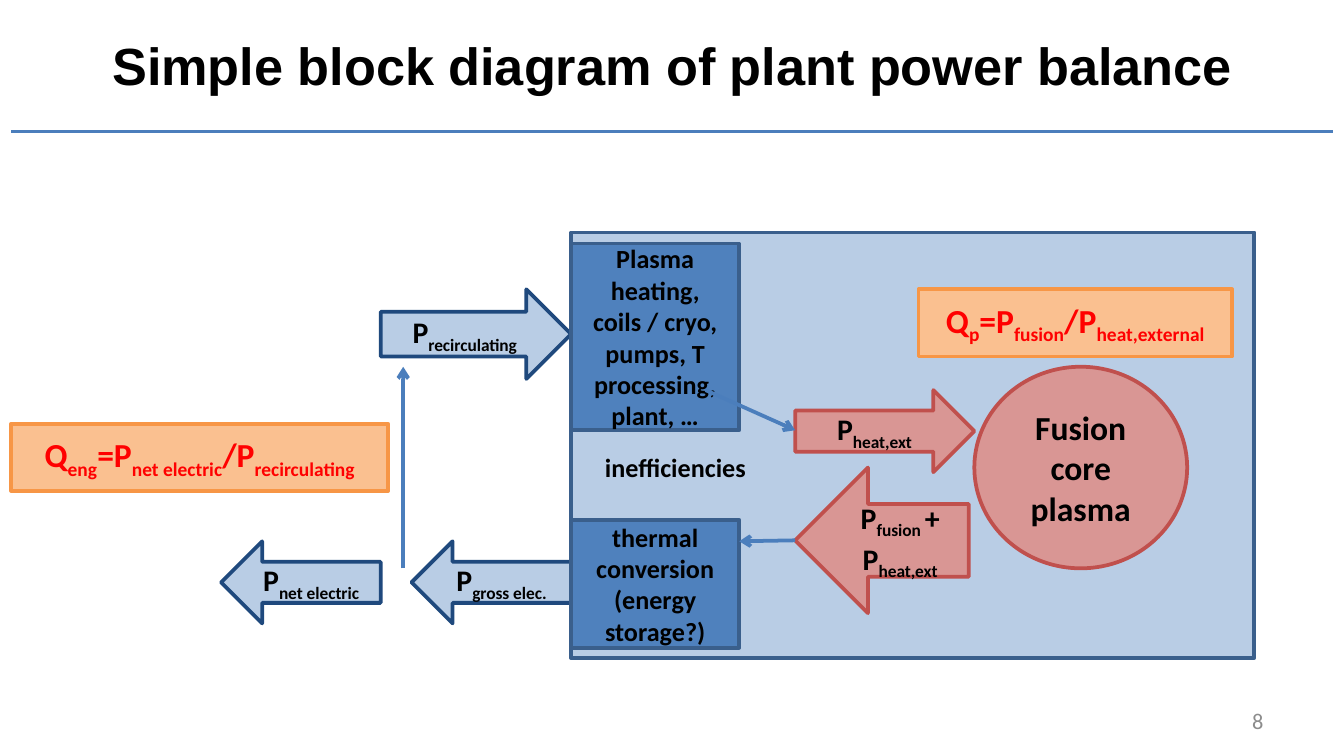
"""Build the slide with the plant power balance block diagram."""
from lxml import etree
from pptx import Presentation
from pptx.dml.color import RGBColor
from pptx.enum.shapes import MSO_CONNECTOR, MSO_SHAPE
from pptx.enum.text import MSO_ANCHOR, MSO_AUTO_SIZE, PP_ALIGN
from pptx.oxml.ns import qn
from pptx.util import Pt

RECT, OVAL, ARROW = MSO_SHAPE.RECTANGLE, MSO_SHAPE.OVAL, MSO_SHAPE.RIGHT_ARROW
LEFT, MID, RIGHT = PP_ALIGN.LEFT, PP_ALIGN.CENTER, PP_ALIGN.RIGHT
TOP, CENTER = MSO_ANCHOR.TOP, MSO_ANCHOR.MIDDLE

SIZE = 720, 405
LINK = "4B7EBC"
LOOKS = {
    "plant": ("B9CDE5", "3A5F8C"),
    "unit": ("4F81BD", "3A5F8C"),
    "core": ("D99694", "C0504D"),
    "power": ("B9CDE5", "1F497D"),
    "gain": ("FAC090", "F79646"),
}
# Text between bars is subscript: "P|heat,ext" sets "heat,ext" below the line.
BLOCKS = [
    (RECT, "plant", (306, 124.5, 366, 228), "", {}),
    (OVAL, "core", (522, 196.5, 114, 108), "Fusion core plasma", {"size": 18}),
    (ARROW, "core", (426, 209, 96, 44), "P|heat,ext", {}),
    (ARROW, "core", (426, 250.5, 93, 78), "P|fusion |+ P|heat,ext", {"flip": True}),
    (RECT, "gain", (492, 155, 168, 36), "Q|p|=P|fusion|/P|heat,external",
     {"size": 18, "color": "FF0000"}),
    (ARROW, "power", (204, 155, 102, 48), "P|recirculating", {}),
    (ARROW, "power", (220.5, 290, 85.5, 44), "P|gross elec.", {"flip": True}),
    (ARROW, "power", (118.5, 290, 85.5, 44), "P|net electric", {"flip": True}),
    (RECT, "gain", (6, 227, 202, 36), "Q|eng|=P|net electric|/P|recirculating",
     {"size": 18, "color": "FF0000"}),
    (RECT, "unit", (306, 130.5, 90, 100),
     "Plasma heating, coils / cryo, pumps, T processing, plant, …", {"size": 14}),
    (RECT, "unit", (306, 278.5, 90, 68.5),
     "thermal conversion\n(energy storage?)", {"size": 14}),
]
LINKS = [
    ((378, 209), (426, 230.5)),
    ((426, 289.5), (396, 290)),
    ((216, 304.5), (216, 196.5)),
]
LABELS = [
    ((6, 4.5, 708, 60), "Simple block diagram of plant power balance",
     {"size": 28, "font": "Arial"}),
    ((317, 238.5, 91.5, 24.5), "inefficiencies",
     {"size": 14, "align": LEFT, "anchor": TOP, "wrap": False}),
    ((654, 375, 30, 21.5), "8",
     {"size": 12, "color": "8C8C8C", "bold": False, "align": RIGHT}),
]


def tint(code):
    return RGBColor.from_string(code)


def write(shape, text, size=16, font="Calibri", color="000000", bold=True,
          align=MID, anchor=CENTER, wrap=True):
    frame = shape.text_frame
    frame.word_wrap = wrap
    frame.vertical_anchor = anchor
    if not wrap:
        frame.auto_size = MSO_AUTO_SIZE.SHAPE_TO_FIT_TEXT
    for row, line in enumerate(text.split("\n")):
        para = frame.add_paragraph() if row else frame.paragraphs[0]
        para.alignment = align
        for index, part in enumerate(line.split("|")):
            run = para.add_run()
            run.text = part
            face = run.font
            face.size, face.name, face.bold = Pt(size), font, bold
            face.color.rgb = tint(color)
            if index % 2:
                run._r.get_or_add_rPr().set("baseline", "-25000")


def block(shapes, kind, look, box, text, flip=False, **style):
    shape = shapes.add_shape(kind, *map(Pt, box))
    fill, edge = LOOKS[look]
    shape.shadow.inherit = False
    shape.fill.solid()
    shape.fill.fore_color.rgb = tint(fill)
    shape.line.color.rgb = tint(edge)
    shape.line.width = Pt(2)
    if flip:
        shape._element.spPr.find(qn("a:xfrm")).set("flipH", "1")
    if text:
        write(shape, text, **style)


def link(shapes, start, end, head=True):
    line = shapes.add_connector(MSO_CONNECTOR.STRAIGHT, *map(Pt, start + end))
    line.line.color.rgb = tint(LINK)
    line.line.width = Pt(2)
    if head:
        etree.SubElement(line.line._get_or_add_ln(), qn("a:tailEnd"), type="arrow")
    etree.SubElement(line._element.spPr, qn("a:effectLst"))


def main():
    deck = Presentation()
    deck.slide_width, deck.slide_height = map(Pt, SIZE)
    shapes = deck.slides.add_slide(deck.slide_layouts[6]).shapes
    link(shapes, (6, 70.5), (714, 70.5), head=False)
    for kind, look, box, text, style in BLOCKS:
        block(shapes, kind, look, box, text, **style)
    for start, end in LINKS:
        link(shapes, start, end)
    for box, text, style in LABELS:
        write(shapes.add_textbox(*map(Pt, box)), text, **style)
    deck.save("out.pptx")


if __name__ == "__main__":
    main()
